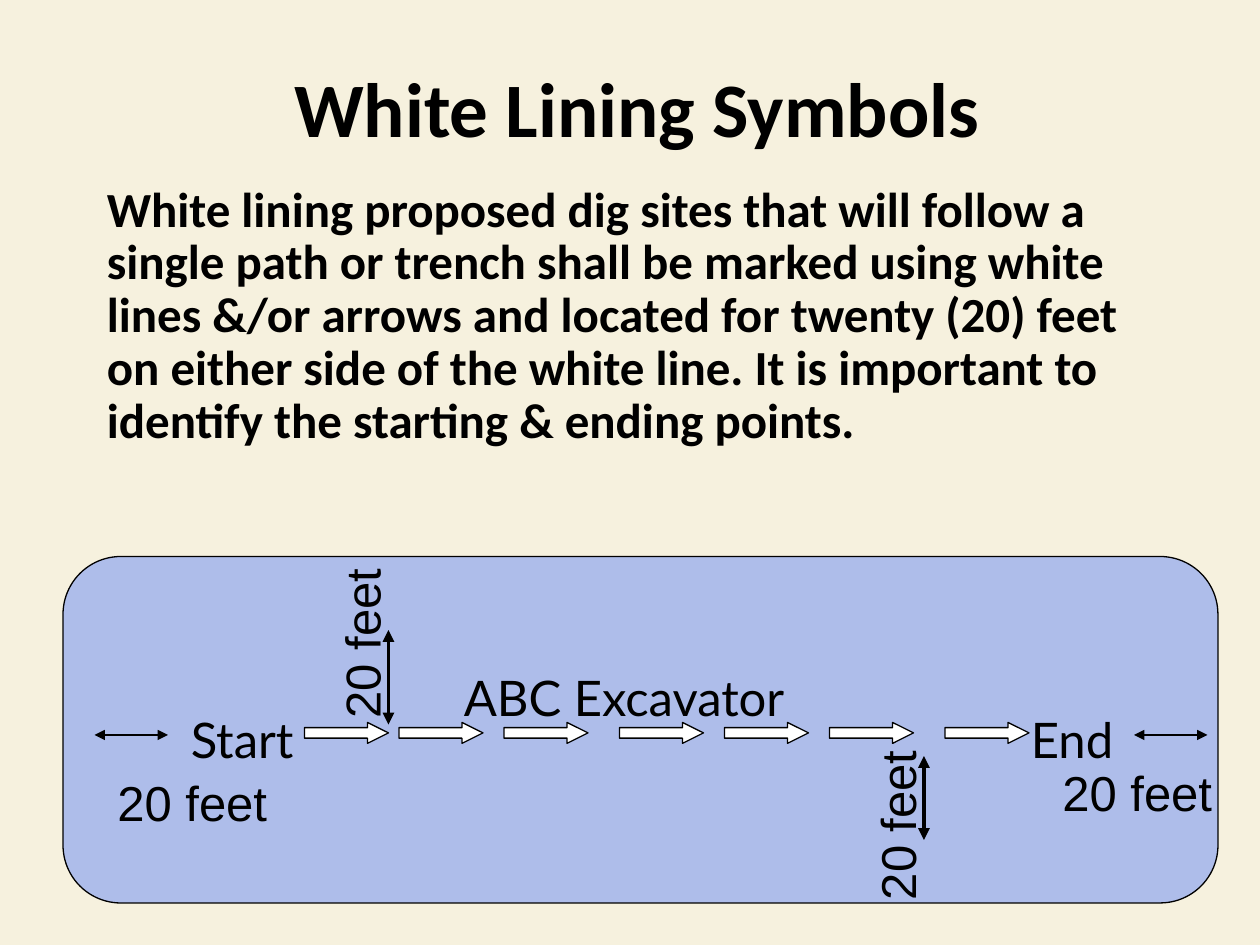
from pptx import Presentation
from pptx.dml.color import RGBColor
from pptx.enum.shapes import MSO_CONNECTOR as Link, MSO_SHAPE as Kind
from pptx.enum.text import MSO_ANCHOR as Anchor, MSO_AUTO_SIZE as Fit, PP_ALIGN as Align
from pptx.oxml.ns import qn
from pptx.util import Emu, Pt
from lxml.etree import SubElement

PX = 7620  # 120 px to the inch
COLORS = {"back": "F6F1DE", "ink": "000000", "site": "3366FF", "mark": "FFFFFF"}
BODY = ("White lining proposed dig sites that will follow a single path or trench "
        "shall be marked using white lines &/or arrows and located for twenty (20) "
        "feet on either side of the white line. It is important to identify the "
        "starting & ending points.")


def px(*sizes):
    return [Emu(n * PX) for n in sizes]


def color(name):
    return RGBColor.from_string(COLORS[name])


def write(frame, text, font, size, bold=False):
    frame.word_wrap = True
    para = frame.paragraphs[0]
    para.text = text
    para.font.name, para.font.size, para.font.bold = font, Pt(size), bold
    para.font.color.rgb = color("ink")
    return para


def add_label(shapes, box, text, font, anchor=Anchor.TOP, turn=0):
    label = shapes.add_textbox(*px(*box))
    label.rotation = turn
    write(label.text_frame, text, font, 28)
    label.text_frame.vertical_anchor = anchor
    label.text_frame.auto_size = Fit.SHAPE_TO_FIT_TEXT


def add_block(shapes, kind, box, fill):
    block = shapes.add_shape(kind, *px(*box))
    block.shadow.inherit = False
    block.fill.solid()
    block.fill.fore_color.rgb = color(fill)
    block.line.color.rgb = color("ink")
    block.line.width = Pt(0.75)
    return block


def add_span(shapes, ends, width):
    """Draw a line with an arrowhead at both ends."""
    span = shapes.add_connector(Link.STRAIGHT, *px(*ends))
    span.line.color.rgb = color("ink")
    span.line.width = Pt(width)
    line = span.line._get_or_add_ln()
    for end in ("a:headEnd", "a:tailEnd"):
        SubElement(line, qn(end), type="triangle")
    SubElement(span._element.spPr, qn("a:effectLst"))


def add_title(slide, box):
    title = slide.shapes.title
    title.left, title.top, title.width, title.height = px(*box)
    title.text_frame.vertical_anchor = Anchor.MIDDLE
    para = write(title.text_frame, "White Lining Symbols", "Calibri", 44, True)
    para.alignment, para.line_spacing = Align.CENTER, 0.9


def add_body(slide, box):
    body = slide.shapes.add_textbox(*px(*box))
    write(body.text_frame, BODY, "Calibri", 28, True).line_spacing = 0.9


def add_site(slide, box):
    """Draw the dig site with its path and clearances."""
    left, top, _, _ = box
    site = add_block(slide.shapes, Kind.ROUNDED_RECTANGLE, box, "site")
    site.adjustments[0] = 0.167
    tint = site._element.spPr.find(qn("a:solidFill"))[0]
    SubElement(tint, qn("a:alpha"), val="37000")

    path = slide.shapes.add_group_shape().shapes
    for x in (230, 320, 420, 530, 630, 730, 840):
        arrow = add_block(path, Kind.RIGHT_ARROW, (left + x, top + 158, 80, 20), "mark")
        arrow.adjustments[1] = 1
    for text, x, y, wide in (("Start", 110, 140, 130), ("End", 910, 140, 130),
                             ("ABC Excavator", 370, 100, 670)):
        add_label(path, (left + x, top + y, wide, 68), text, "Lato", Anchor.MIDDLE)

    for x1, y1, x2, y2, width, x, y, turn in (
            (310, 70, 310, 160, 2.25, 174, 42, 270),
            (820, 190, 820, 270, 2.25, 684, 215, 270),
            (100, 170, 30, 170, 0.75, 40, 200, 0),
            (1090, 170, 1020, 170, 0.75, 940, 190, 0)):
        ends = (left + x1, top + y1, left + x2, top + y2)
        add_span(slide.shapes, ends, width)
        add_label(slide.shapes, (left + x, top + y, 200, 48), "20 feet", "Arial", turn=turn)


def main():
    deck = Presentation()
    deck.slide_width, deck.slide_height = px(1200, 900)
    slide = deck.slides.add_slide(deck.slide_layouts[5])
    slide.background.fill.solid()
    slide.background.fill.fore_color.rgb = color("back")
    add_title(slide, (90, 20, 1034, 174))
    add_body(slide, (90, 170, 1020, 340))
    add_site(slide, (60, 530, 1100, 330))
    deck.save("out.pptx")


if __name__ == "__main__":
    main()
